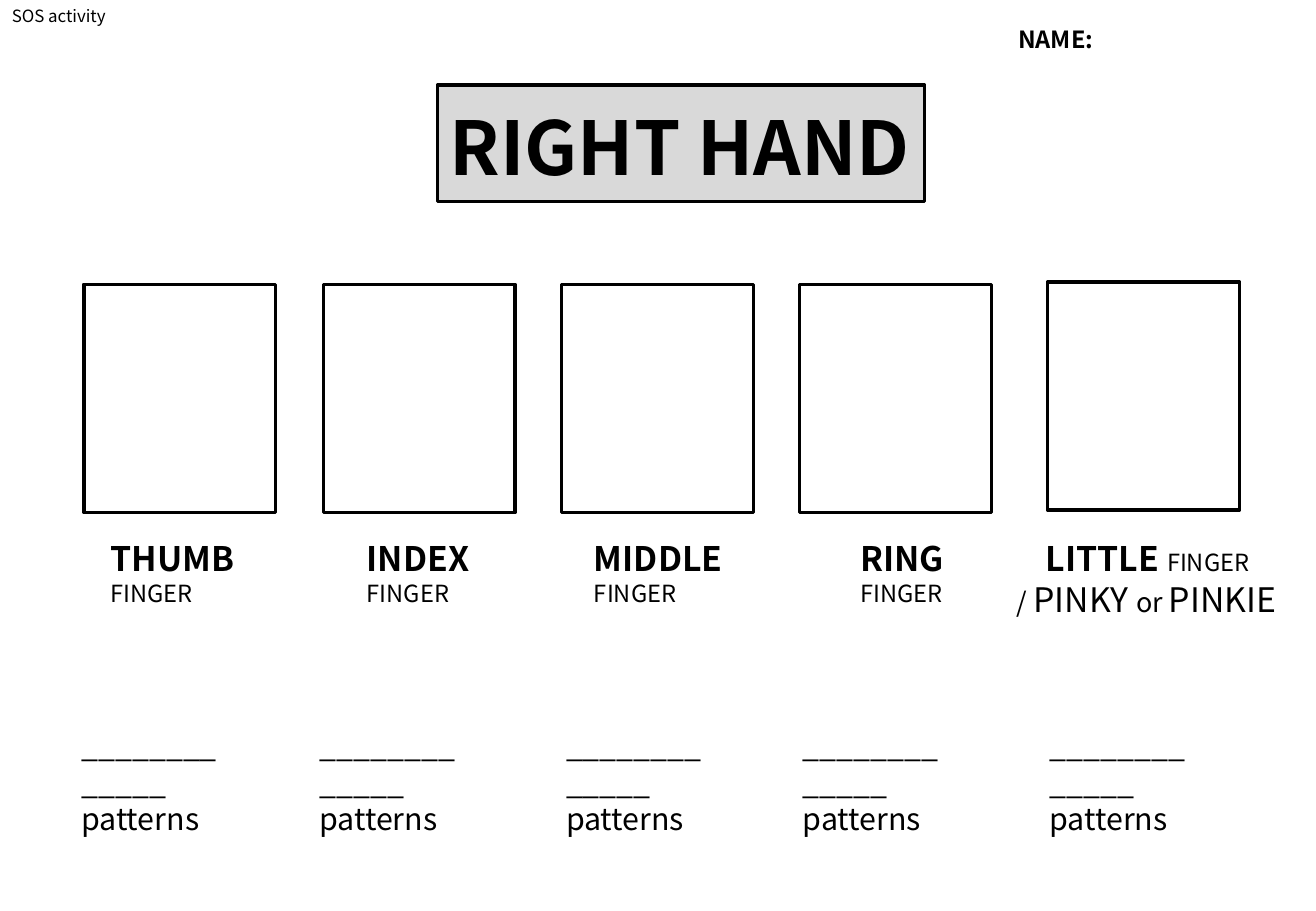
from dataclasses import dataclass
from pptx import Presentation
from pptx.dml.color import RGBColor
from pptx.enum.shapes import MSO_SHAPE
from pptx.enum.text import MSO_ANCHOR, MSO_AUTO_SIZE, PP_ALIGN
from pptx.util import Inches, Pt


@dataclass
class Theme:
    font: str = "Noto Sans CJK KR"
    ink: RGBColor = RGBColor(0, 0, 0)
    paper: RGBColor = RGBColor(255, 255, 255)
    banner: RGBColor = RGBColor(0xD9, 0xD9, 0xD9)
    title: int = 44
    finger: int = 20
    prompt: int = 18
    joining: int = 16
    label: int = 14
    note: int = 10


theme = Theme()
deck = Presentation()
deck.slide_width, deck.slide_height = Inches(10.83), Inches(7.5)
page = deck.slides.add_slide(deck.slide_layouts[5])


def add_frame(left, top, width, height, fill):
    frame = page.shapes.add_shape(
        MSO_SHAPE.RECTANGLE, Inches(left), Inches(top), Inches(width), Inches(height))
    frame.shadow.inherit = False
    frame.fill.solid()
    frame.fill.fore_color.rgb = fill
    frame.line.color.rgb = theme.ink
    frame.line.width = Pt(2)
    return frame


def write(box, place, lines, wrap=True):
    box.left, box.top, box.width, box.height = [Inches(length) for length in place]
    frame = box.text_frame
    frame.word_wrap = wrap
    frame.auto_size = MSO_AUTO_SIZE.SHAPE_TO_FIT_TEXT
    frame.vertical_anchor = MSO_ANCHOR.TOP
    for number, spans in enumerate(lines):
        para = frame.add_paragraph() if number else frame.paragraphs[0]
        para.alignment = PP_ALIGN.LEFT
        for text, size, bold in spans:
            span = para.add_run()
            span.text = text
            font = span.font if len(spans) > 1 else para.font
            font.name, font.size, font.bold = theme.font, Pt(size), bold
            font.color.rgb = theme.ink
    return frame


banner = add_frame(3.6, 0.7, 4.01, 0.96, theme.banner)
title = page.shapes.title
write(title, (3.6, 0.78, 4.32, 0.84), [[("RIGHT HAND", theme.title, True)]])
banner.element.addnext(title.element)

frame_width, frame_height = 1.58, 1.88
columns = [
    (0.69, 2.34, 0.57),
    (2.66, 2.34, 2.53),
    (4.62, 2.34, 4.56),
    (6.58, 2.34, 6.51),
    (8.62, 2.32, 8.54),
]
for frame_left, frame_top, prompt_left in columns:
    add_frame(frame_left, frame_top, frame_width, frame_height, theme.paper)
    write(page.shapes.add_textbox(0, 0, 0, 0), (prompt_left, 5.94, 1.8, 0.71), [
        [("________ _____", theme.prompt, False)],
        [("patterns", theme.prompt, False)],
    ])

fingers = [("THUMB", 0.81, 1.23), ("INDEX", 2.92, 1.06), ("MIDDLE", 4.79, 1.27), ("RING", 6.98, 0.9)]
for name, left, width in fingers:
    write(page.shapes.add_textbox(0, 0, 0, 0), (left, 4.38, width, 0.67), [
        [(name, theme.finger, True)],
        [("FINGER", theme.label, False)],
    ], wrap=False)

little = write(page.shapes.add_textbox(0, 0, 0, 0), (8.13, 4.38, 2.7, 0.77), [
    [("LITTLE ", theme.finger, True), ("FINGER", theme.label, False)],
    [("/ ", theme.joining, False), ("PINKY ", theme.finger, False),
     ("or ", theme.joining, False), ("PINKIE", theme.finger, False)],
])
for para, indent in zip(little.paragraphs, (0.38, 0.14)):
    para._p.get_or_add_pPr().set("marL", str(Inches(indent)))

write(page.shapes.add_textbox(0, 0, 0, 0), (8.28, 0.16, 0.91, 0.34),
      [[("NAME:", theme.label, True)]], wrap=False)
write(page.shapes.add_textbox(0, 0, 0, 0), (0, 0, 1.28, 0.27),
      [[("SOS activity", theme.note, False)]])

deck.save("out.pptx")
